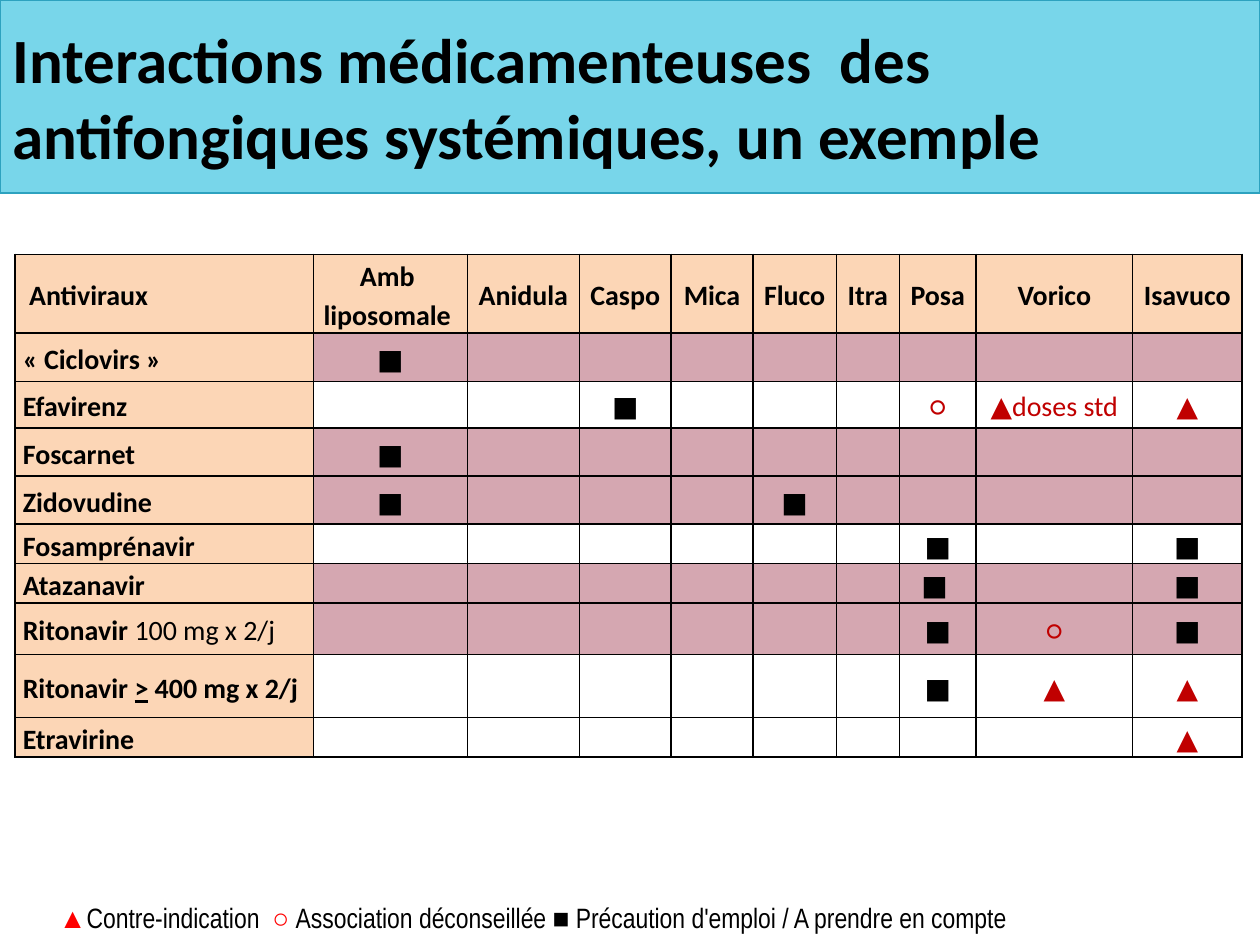
from dataclasses import dataclass

from lxml import etree
from pptx import Presentation, util as u
from pptx.dml.color import RGBColor
from pptx.enum import text
from pptx.oxml.ns import qn


@dataclass(frozen=True)
class Theme:
    black: str = "000000"
    red: str = "C00000"
    bright_red: str = "FF0000"
    banner: str = "78D6EA"
    banner_line: str = "2DA2BF"
    heading: str = "FCD6B6"
    tinted: str = "D5A7B1"
    plain: str = "FFFFFF"
    font: str = "Calibri"
    legend_font: str = "Arial Narrow"
    title_size: int = 36
    text_size: int = 16
    empty_size: int = 10
    line_spacing: float = 1.15


PRECAUTION, AVOID, FORBIDDEN = "■", "○", "▲"

# Column name (one paragraph per line) and width in cm
COLUMNS = [
    (" Antiviraux", 6.02), ("Amb \nliposomale ", 3.1), ("Anidula", 2.26),
    ("Caspo", 1.85), ("Mica", 1.65), ("Fluco", 1.68), ("Itra", 1.27),
    ("Posa", 1.55), ("Vorico", 3.15), ("Isavuco", 2.21),
]
HEADER_HEIGHT = 1.35
AMB, CASPO, FLUCO, POSA, VORICO, ISAVUCO = 1, 3, 5, 7, 8, 9

# Antiviral drug as (text, bold, underline) runs, height in cm, tinted, marks by column
DRUGS = [
    ([("« Ciclovirs »", True, False)], 0.97, True, {AMB: PRECAUTION}),
    ([("Efavirenz", True, False)], 0.94, False,
     {CASPO: PRECAUTION, POSA: AVOID, VORICO: FORBIDDEN + "doses std", ISAVUCO: FORBIDDEN}),
    ([("Foscarnet", True, False)], 0.97, True, {AMB: PRECAUTION}),
    ([("Zidovudine", True, False)], 0.97, True, {AMB: PRECAUTION, FLUCO: PRECAUTION}),
    ([("Fosamprénavir", True, False)], 0.76, False, {POSA: PRECAUTION, ISAVUCO: PRECAUTION}),
    ([("Atazanavir", True, False)], 0.76, True, {POSA: PRECAUTION + " ", ISAVUCO: PRECAUTION}),
    ([("Ritonavir ", True, False), ("100 mg x 2/j", False, False)], 1.04, True,
     {POSA: PRECAUTION, VORICO: AVOID, ISAVUCO: PRECAUTION}),
    ([("Ritonavir ", True, False), (">", True, True), (" 400 mg x 2/j", True, False)], 1.27, False,
     {POSA: PRECAUTION, VORICO: FORBIDDEN, ISAVUCO: FORBIDDEN}),
    ([("Etravirine", True, False)], 0.76, False, {ISAVUCO: FORBIDDEN}),
]


class SlideBuilder:
    def __init__(self, slide, theme):
        self.slide = slide
        self.theme = theme

    def style(self, font, size, color, bold=False, name=None):
        font.name = name or self.theme.font
        font.size = u.Pt(size)
        font.bold = bold
        font.color.rgb = RGBColor.from_string(color)

    def title(self, wording, left, top, width, height):
        shape = self.slide.shapes.title
        shape.left, shape.top, shape.width, shape.height = map(u.Cm, (left, top, width, height))
        shape.fill.solid()
        shape.fill.fore_color.rgb = RGBColor.from_string(self.theme.banner)
        shape.line.color.rgb = RGBColor.from_string(self.theme.banner_line)
        shape.line.width = u.Pt(0.75)
        frame = shape.text_frame
        frame.text = wording
        frame.auto_size = text.MSO_AUTO_SIZE.NONE
        frame.vertical_anchor = text.MSO_ANCHOR.MIDDLE
        paragraph = frame.paragraphs[0]
        paragraph.alignment = text.PP_ALIGN.LEFT
        self.style(paragraph.font, self.theme.title_size, self.theme.black, True)

    def borders(self, cell):
        properties = cell._tc.get_or_add_tcPr()
        for side in ("a:lnL", "a:lnR", "a:lnT", "a:lnB"):
            line = etree.SubElement(properties, qn(side), w=str(u.Pt(1)))
            fill = etree.SubElement(line, qn("a:solidFill"))
            etree.SubElement(fill, qn("a:srgbClr"), val=self.theme.black)

    def cell(self, cell, fill):
        self.borders(cell)
        cell.fill.solid()
        cell.fill.fore_color.rgb = RGBColor.from_string(fill)
        cell.margin_left = cell.margin_right = u.Cm(0.16)
        cell.margin_top = cell.margin_bottom = 0
        cell.vertical_anchor = text.MSO_ANCHOR.MIDDLE
        self.style(cell.text_frame.paragraphs[0].font, self.theme.empty_size, self.theme.black)

    def cell_text(self, cell, wording, color, bold, centred=True):
        cell.text = wording
        for paragraph in cell.text_frame.paragraphs:
            paragraph.line_spacing = self.theme.line_spacing
            paragraph.alignment = text.PP_ALIGN.CENTER if centred else text.PP_ALIGN.LEFT
            self.style(paragraph.font, self.theme.text_size, color, bold)

    def drug_name(self, cell, runs):
        paragraph = cell.text_frame.paragraphs[0]
        paragraph.line_spacing = self.theme.line_spacing
        self.style(paragraph.font, self.theme.text_size, self.theme.black, True)
        for wording, bold, underline in runs:
            run = paragraph.add_run()
            run.text = wording
            run.font.bold = bold
            run.font.underline = underline

    def interactions(self, left, top):
        theme = self.theme
        heights = [HEADER_HEIGHT] + [drug[1] for drug in DRUGS]
        widths = [width for _, width in COLUMNS]
        table = self.slide.shapes.add_table(
            len(heights), len(widths), u.Cm(left), u.Cm(top),
            u.Cm(sum(widths)), u.Cm(sum(heights))).table
        table.first_row = table.horz_banding = False
        for column, width in zip(table.columns, widths):
            column.width = u.Cm(width)
        for row, height in zip(table.rows, heights):
            row.height = u.Cm(height)

        # Heading row
        for index, (name, _) in enumerate(COLUMNS):
            self.cell(table.cell(0, index), theme.heading)
            self.cell_text(table.cell(0, index), name, theme.black, True, index > 0)

        # One row per antiviral drug
        for row, (runs, _, tinted, marks) in enumerate(DRUGS, 1):
            self.cell(table.cell(row, 0), theme.heading)
            self.drug_name(table.cell(row, 0), runs)
            for column in range(1, len(COLUMNS)):
                cell = table.cell(row, column)
                self.cell(cell, theme.tinted if tinted else theme.plain)
                if column in marks:
                    mark = marks[column]
                    color = theme.black if mark.startswith(PRECAUTION) else theme.red
                    self.cell_text(cell, mark, color, False)

    def legend(self, runs, left, top, width, height):
        box = self.slide.shapes.add_textbox(*map(u.Cm, (left, top, width, height)))
        box.text_frame.word_wrap = True
        paragraph = box.text_frame.paragraphs[0]
        paragraph.line_spacing = self.theme.line_spacing
        for wording, color in runs:
            run = paragraph.add_run()
            run.text = wording
            self.style(run.font, self.theme.text_size, color, name=self.theme.legend_font)


def main():
    presentation = Presentation()
    presentation.slide_width, presentation.slide_height = u.Cm(25.4), u.Cm(19.05)
    slide = presentation.slides.add_slide(presentation.slide_layouts[5])
    theme = Theme()
    builder = SlideBuilder(slide, theme)

    # Interaction table
    builder.interactions(0.3, 5.13)

    # Title banner
    builder.title("Interactions médicamenteuses  des antifongiques systémiques, un exemple",
                  0, 0, 25.4, 3.89)

    # Key to the marks
    builder.legend([
        (FORBIDDEN, theme.bright_red),
        ("Contre-indication  ", theme.black),
        (AVOID + " ", theme.bright_red),
        (f"Association déconseillée {PRECAUTION} Précaution d'emploi / A prendre en compte",
         theme.black),
    ], 0.94, 17.93, 23.19, 1.04)

    presentation.save("out.pptx")


if __name__ == "__main__":
    main()
